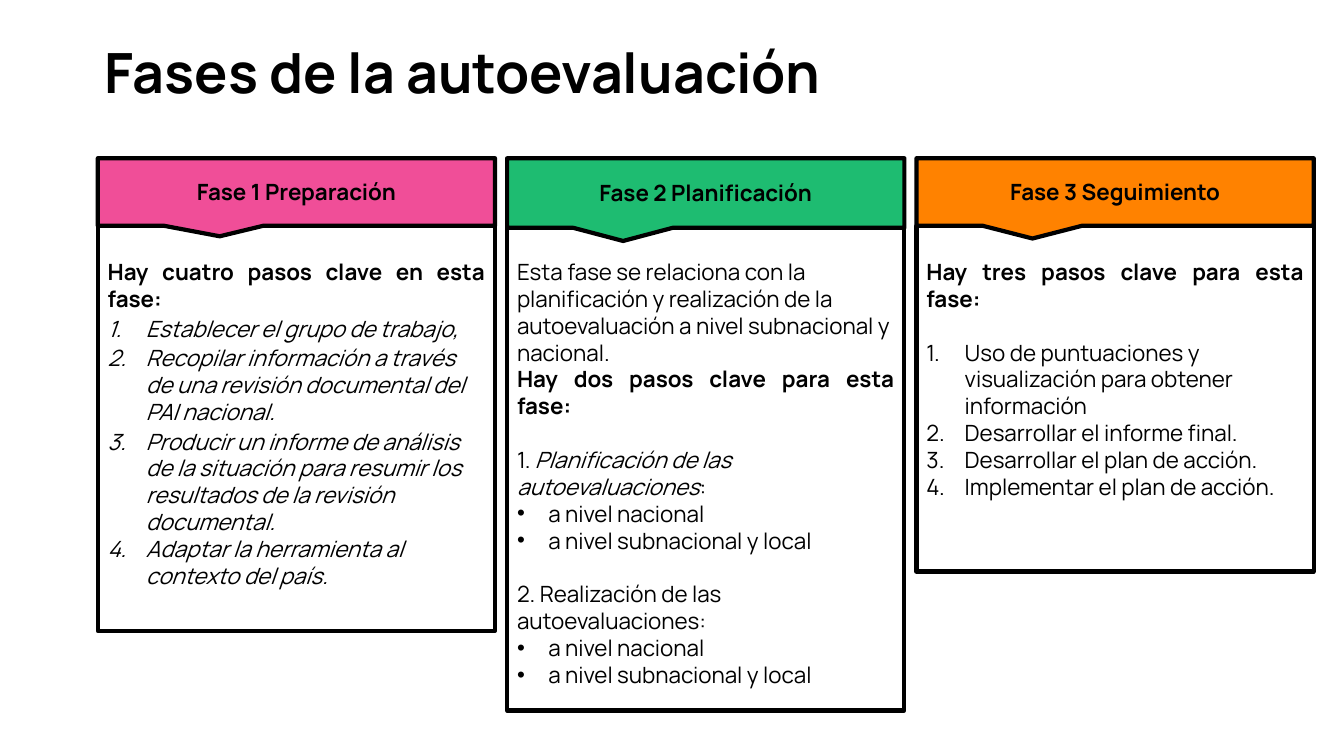
"""Build the slide on the three phases of the self-assessment."""
import pptx
import pptx.util
import pptx.dml.color
import pptx.enum.shapes
import pptx.enum.text
import lxml.etree

Inches, Pt = pptx.util.Inches, pptx.util.Pt
RGB = pptx.dml.color.RGBColor.from_string
SHAPE = pptx.enum.shapes.MSO_SHAPE
ALIGN = pptx.enum.text.PP_ALIGN
ANCHOR = pptx.enum.text.MSO_ANCHOR

THEME = {"font": "Manrope", "ink": "000000", "title": 39.6, "body": 16,
         "line": 3, "gap": 19.2,
         "pink": "F04E98", "green": "1EBC71", "orange": "FF8200"}

TITLE = "Fases de la autoevaluación"
LEVELS = ["a nivel nacional", "a nivel subnacional y local"]

PHASES = [
    {"name": "Fase 1 Preparación", "fill": "pink", "head": 0.67, "body": 4.02,
     "tip": (-0.193, 0.656),
     "text": [
         ("lead", "Hay cuatro pasos clave en esta fase:", 0),
         ("step", [("Establecer el grupo de trabajo,", True)], 2),
         ("step", [("Recopilar información a través de una revisión "
                    "documental del PAI nacional.", True)], 2),
         ("step", [("Producir un informe de análisis de la situación para "
                    "resumir los resultados de la revisión documental.", True)], 2),
         ("step", [("Adaptar la herramienta al contexto del país.", True)], 0)]},
    {"name": "Fase 2 Planificación", "fill": "green", "head": 0.69, "body": 4.81,
     "tip": (-0.208, 0.689),
     "text": [
         ("plain", "Esta fase se relaciona con la planificación y realización "
                   "de la autoevaluación a nivel subnacional y nacional.", 0),
         ("lead", "Hay dos pasos clave para esta fase:", 0),
         ("plain", [("1. ", False), ("Planificación de las autoevaluaciones", True),
                    (":", False)], THEME["gap"]),
         *[("dot", level, 0) for level in LEVELS],
         ("plain", "2. Realización de las autoevaluaciones:", THEME["gap"]),
         *[("dot", level, 0) for level in LEVELS]]},
    {"name": "Fase 3 Seguimiento", "fill": "orange", "head": 0.67, "body": 3.43,
     "tip": (-0.208, 0.689),
     "text": [
         ("lead", "Hay tres pasos clave para esta fase:", 0),
         ("step", "Uso de puntuaciones y visualización para obtener "
                  "información", THEME["gap"]),
         ("step", "Desarrollar el informe final.", 0),
         ("step", "Desarrollar el plan de acción.", 0),
         ("step", "Implementar el plan de acción.", 0)]},
]

LEFT, TOP, WIDTH, PITCH = 0.97, 1.57, 3.94, 4.06
BODY_TOP = 2.24
BULLETS = {
    "step": (0.38, [("buFont", {"typeface": "+mj-lt"}),
                    ("buAutoNum", {"type": "arabicPeriod"})]),
    "dot": (0.31, [("buFont", {"typeface": "Arial"}), ("buChar", {"char": "•"})]),
}
SPACE = "{http://schemas.openxmlformats.org/drawingml/2006/main}"


def assign(thing, values):
    """Set each named value on the thing."""
    for key, value in values.items():
        setattr(thing, key, value)


def write(para, text, size, **style):
    """Add one run of text to a paragraph."""
    run = para.add_run()
    run.text = text
    assign(run.font, {"name": THEME["font"], "size": Pt(size), **style})
    run.font.color.rgb = RGB(THEME["ink"])


def bullet(para, kind):
    """Give a paragraph its hanging indent and mark."""
    indent, marks = BULLETS[kind]
    props = para._p.get_or_add_pPr()
    props.set("marL", str(Inches(indent)))
    props.set("indent", str(-Inches(indent)))
    for tag, values in marks:
        lxml.etree.SubElement(props, SPACE + tag, values)


def panel(slide, kind, left, top, height, fill=None):
    """Draw one outlined shape, filled or clear."""
    shape = slide.shapes.add_shape(kind, Inches(left), Inches(top),
                                   Inches(WIDTH), Inches(height))
    shape.shadow.inherit = False
    if fill:
        shape.fill.solid()
        shape.fill.fore_color.rgb = RGB(fill)
    else:
        shape.fill.background()
    shape.line.color.rgb = RGB(THEME["ink"])
    shape.line.width = Pt(THEME["line"])
    shape.text_frame.word_wrap = True
    return shape


def fill_body(frame, rows):
    """Write the paragraphs of one phase."""
    assign(frame, {"vertical_anchor": ANCHOR.TOP, "margin_top": Inches(0.32)})
    for index, (kind, text, gap) in enumerate(rows):
        para = frame.add_paragraph() if index else frame.paragraphs[0]
        para.alignment = ALIGN.JUSTIFY if kind == "lead" else ALIGN.LEFT
        if gap:
            para.space_before = Pt(gap)
        if kind in BULLETS:
            bullet(para, kind)
        runs = [(text, False)] if isinstance(text, str) else text
        for words, slant in runs:
            write(para, words, THEME["body"], bold=kind == "lead", italic=slant)


def main():
    """Make the deck and save it."""
    deck = pptx.Presentation()
    assign(deck, {"slide_width": Inches(13.33), "slide_height": Inches(7.5)})
    slide = deck.slides.add_slide(deck.slide_layouts[6])

    title = slide.shapes.add_textbox(Inches(LEFT), Inches(0.4),
                                     Inches(11.96), Inches(0.69)).text_frame
    assign(title, {"word_wrap": True, "vertical_anchor": ANCHOR.MIDDLE,
                   "margin_left": Inches(0.07), "margin_right": Inches(0.07),
                   "margin_top": Inches(0.04), "margin_bottom": Inches(0.04)})
    title.paragraphs[0].line_spacing = 0.9
    write(title.paragraphs[0], TITLE, THEME["title"], bold=True)

    for index, phase in enumerate(PHASES):
        left = LEFT + index * PITCH
        body = panel(slide, SHAPE.RECTANGLE, left, BODY_TOP, phase["body"])
        fill_body(body.text_frame, phase["text"])
        head = panel(slide, SHAPE.RECTANGULAR_CALLOUT, left, TOP,
                     phase["head"], THEME[phase["fill"]])
        head.adjustments[0], head.adjustments[1] = phase["tip"]
        head.text_frame.vertical_anchor = ANCHOR.MIDDLE
        para = head.text_frame.paragraphs[0]
        para.alignment = ALIGN.CENTER
        write(para, phase["name"], THEME["body"], bold=True)

    deck.save("out.pptx")


if __name__ == "__main__":
    main()
